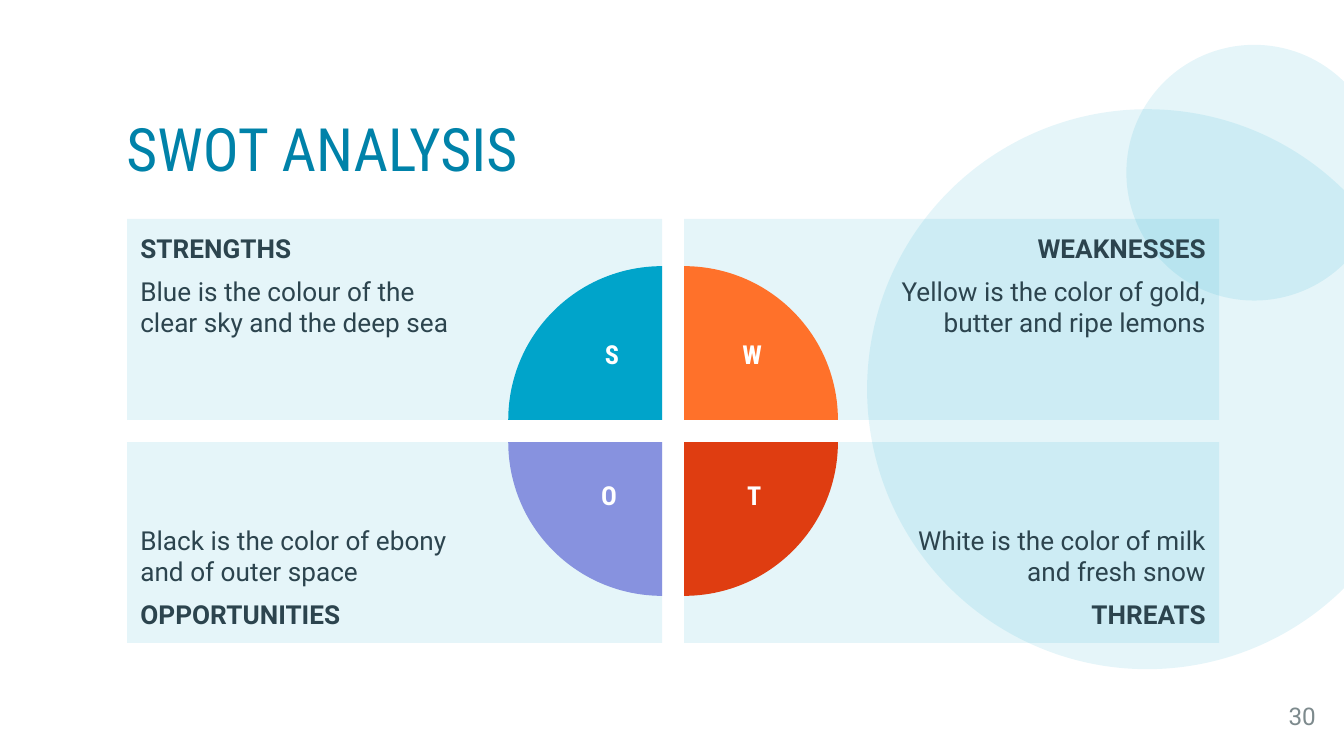
from dataclasses import dataclass

from lxml.etree import SubElement
from pptx import Presentation
from pptx.dml.color import RGBColor
from pptx.enum.shapes import MSO_SHAPE
from pptx.enum.text import MSO_ANCHOR, MSO_AUTO_SIZE, PP_ALIGN
from pptx.oxml.ns import qn
from pptx.util import Pt


@dataclass(frozen=True)
class Theme:
    body_font: str = "Roboto"
    display_font: str = "Roboto Condensed"
    title_size: float = 32
    text_size: float = 14
    number_size: float = 13
    title: str = "0082A9"
    text: str = "2C444E"
    number: str = "7D8A8D"
    tint: str = "00A4CA"
    tint_opacity: int = 10
    white: str = "FFFFFF"


THEME = Theme()

# Content
TITLE = "SWOT ANALYSIS"
PAGE_NUMBER = "30"
# letter, letter box width, colour, column, row, pie rotation, heading, text
QUADRANTS = [
    ("S", 18.7, "00A4CA", 0, 0, 0, "STRENGTHS",
     "Blue is the colour of the clear sky and the deep sea"),
    ("W", 34.6, "FF712A", 1, 0, 90, "WEAKNESSES",
     "Yellow is the color of gold, butter and ripe lemons"),
    ("O", 25.2, "8792DF", 0, 1, 270, "OPPORTUNITIES",
     "Black is the color of ebony and of outer space"),
    ("T", 19.4, "DF3D11", 1, 1, 180, "THREATS",
     "White is the color of milk and fresh snow"),
]
CIRCLES = [(464.5, 58.5, 300), (603.4, 24, 137)]  # left, top, diameter

# Layout in points
GRID_LEFT, GRID_TOP = 68.1, 117.3
PANEL_WIDTH, PANEL_HEIGHT, GAP = 286.6, 107.7, 11.8
PIE_RADIUS = 82.4
PADDING, PIE_PADDING = 7.2, 108
LETTER_HEIGHT, LETTER_RISE = 30.6, 32
LETTER_INSETS = (28.4, 36.4)  # by column, from the panel's inner edge
ANGLE_UNIT = 0.6  # adjustment value of one degree


def add_shape(page, kind, left, top, width, height, colour, opacity=100):
    shape = page.shapes.add_shape(kind, Pt(left), Pt(top), Pt(width), Pt(height))
    shape.shadow.inherit = False
    shape.line.fill.background()
    shape.fill.solid()
    shape.fill.fore_color.rgb = RGBColor.from_string(colour)
    if opacity < 100:
        fill = shape._element.spPr.find(qn("a:solidFill"))
        SubElement(fill[0], qn("a:alpha"), val=str(opacity * 1000))
    return shape


def set_arc(shape, start, end):
    shape.adjustments[0] = start * ANGLE_UNIT
    shape.adjustments[1] = end * ANGLE_UNIT


def set_frame(frame, anchor, left=PADDING, top=PADDING, right=PADDING, bottom=PADDING):
    frame.word_wrap = True
    frame.auto_size = MSO_AUTO_SIZE.NONE
    frame.vertical_anchor = anchor
    frame.margin_left, frame.margin_top = Pt(left), Pt(top)
    frame.margin_right, frame.margin_bottom = Pt(right), Pt(bottom)


def set_para(para, text, font, size, colour, align, bold=False):
    para.text = text
    para.alignment = align
    para.font.name = font
    para.font.size = Pt(size)
    para.font.bold = bold
    para.font.color.rgb = RGBColor.from_string(colour)


def add_panel(page, left, top, column, row, heading, text):
    panel = add_shape(page, MSO_SHAPE.RECTANGLE, left, top, PANEL_WIDTH,
                      PANEL_HEIGHT, THEME.tint, THEME.tint_opacity)
    sides = (PIE_PADDING, PADDING) if column else (PADDING, PIE_PADDING)
    frame = panel.text_frame
    set_frame(frame, MSO_ANCHOR.BOTTOM if row else MSO_ANCHOR.TOP,
              left=sides[0], right=sides[1])
    align = PP_ALIGN.RIGHT if column else PP_ALIGN.LEFT
    lines = [(heading, True), (text, False)]
    if row:
        lines.reverse()
    for index, (line, bold) in enumerate(lines):
        para = frame.add_paragraph() if index else frame.paragraphs[0]
        set_para(para, line, THEME.body_font, THEME.text_size, THEME.text, align, bold)
        if index:
            para.space_before = para.space_after = Pt(6)


def add_label(page, left, top, width, height):
    box = page.shapes.add_textbox(Pt(left), Pt(top), Pt(width), Pt(height))
    return box.text_frame


def main():
    deck = Presentation()
    deck.slide_width, deck.slide_height = Pt(720), Pt(405)
    page = deck.slides.add_slide(deck.slide_layouts[5])
    title = page.shapes.title

    # Background circles, cut off at the slide's edge
    for left, top, size in CIRCLES:
        circle = add_shape(page, MSO_SHAPE.CHORD, left, top, size, size,
                           THEME.tint, THEME.tint_opacity)
        set_arc(circle, 45, 315)

    # Title, in front of the circles
    page.shapes._spTree.append(title._element)
    title.left, title.top = Pt(67.7), Pt(51.8)
    title.width, title.height = Pt(520), Pt(59)
    set_frame(title.text_frame, MSO_ANCHOR.MIDDLE, 0, 0, 0, 0)
    heading = title.text_frame.paragraphs[0]
    set_para(heading, TITLE, THEME.display_font, THEME.title_size, THEME.title,
             PP_ALIGN.LEFT)
    heading.line_spacing = 0.9

    # Page number
    frame = add_label(page, 677.5, 372.5, 27.4, 22.3)
    set_frame(frame, MSO_ANCHOR.MIDDLE, 0, 0, 0, 0)
    set_para(frame.paragraphs[0], PAGE_NUMBER, THEME.body_font, THEME.number_size,
             THEME.number, PP_ALIGN.RIGHT)

    # Panels first, so that the pies lie over them
    corners = []
    for _, _, _, column, row, _, name, text in QUADRANTS:
        left = GRID_LEFT + column * (PANEL_WIDTH + GAP)
        top = GRID_TOP + row * (PANEL_HEIGHT + GAP)
        add_panel(page, left, top, column, row, name, text)
        corners.append((left + (1 - column) * PANEL_WIDTH,
                        top + (1 - row) * PANEL_HEIGHT))

    # Quarter pies centred on the panels' inner corners, with their letters
    for quadrant, (x, y) in zip(QUADRANTS, corners):
        letter, width, colour, column, row, rotation, _, _ = quadrant
        pie = add_shape(page, MSO_SHAPE.PIE, x - PIE_RADIUS, y - PIE_RADIUS,
                        2 * PIE_RADIUS, 2 * PIE_RADIUS, colour)
        set_arc(pie, 180, 270)
        pie.rotation = rotation

        centre_x = x + (2 * column - 1) * LETTER_INSETS[column]
        centre_y = y + (2 * row - 1) * LETTER_RISE
        frame = add_label(page, centre_x - width / 2, centre_y - LETTER_HEIGHT / 2,
                          width, LETTER_HEIGHT)
        set_frame(frame, MSO_ANCHOR.TOP, top=3.6, bottom=3.6)
        set_para(frame.paragraphs[0], letter, THEME.display_font, THEME.text_size,
                 THEME.white, PP_ALIGN.CENTER, True)

    deck.save("out.pptx")


if __name__ == "__main__":
    main()
